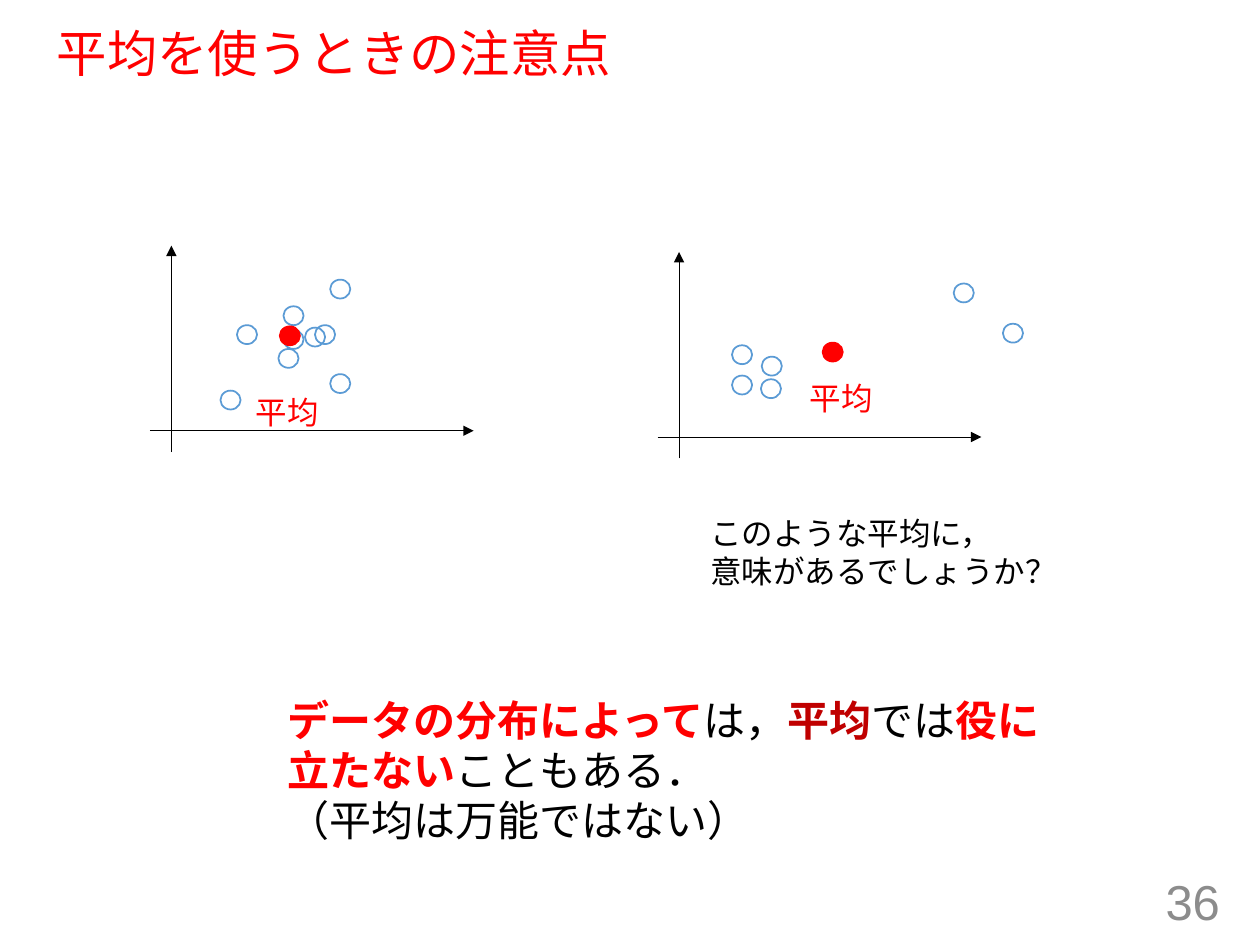
from dataclasses import dataclass

from lxml import etree
from pptx import Presentation
from pptx.dml.color import RGBColor
from pptx.enum.shapes import MSO_CONNECTOR, MSO_SHAPE
from pptx.enum.text import MSO_ANCHOR, MSO_AUTO_SIZE, PP_ALIGN
from pptx.oxml.ns import qn
from pptx.util import Pt

STRAIGHT = MSO_CONNECTOR.STRAIGHT
OVAL = MSO_SHAPE.OVAL
MIDDLE, TOP = MSO_ANCHOR.MIDDLE, MSO_ANCHOR.TOP
LEFT, RIGHT = PP_ALIGN.LEFT, PP_ALIGN.RIGHT
NO_AUTOFIT, GROW = MSO_AUTO_SIZE.NONE, MSO_AUTO_SIZE.SHAPE_TO_FIT_TEXT


@dataclass(frozen=True)
class Theme:
    """Colours, fonts and type sizes of the deck."""
    red: RGBColor = RGBColor(0xFF, 0x00, 0x00)
    dark_red: RGBColor = RGBColor(0xC0, 0x00, 0x00)
    black: RGBColor = RGBColor(0x00, 0x00, 0x00)
    grey: RGBColor = RGBColor(0x8C, 0x8C, 0x8C)
    blue: RGBColor = RGBColor(0x5B, 0x9B, 0xD5)
    heading_font: str = "Arial"
    note_font: str = "Calibri"
    body_font: str = "Noto Sans CJK JP"
    title_size: float = 28.8
    number_size: float = 28
    body_size: float = 24
    label_size: float = 18


THEME = Theme()
AXIS_INSET = 12.25
MARKER_WIDTH, MARKER_HEIGHT = 11.5, 10.8
PLOT_SIZE = (185, 118)
LABEL_SIZE = (51, 29)

CLUSTERED = [(76.3, 34.6), (88.6, 46.8), (94.3, 45.4), (73.4, 59), (76.3, 48.2),
             (49.7, 45.4), (103, 19.4), (103, 73.4), (40.3, 82.8)]
SCATTERED = [(59, 72.7), (169.2, 18), (59.5, 59.8), (42.5, 53.3),
             (197.3, 41), (42.5, 70.6)]


def style_font(font, name, size, color):
    """Set the name, size and colour of a font."""
    font.name = name
    font.size = Pt(size)
    font.color.rgb = color


def add_text(page, area, lines, name, size, color, align=LEFT, anchor=TOP,
             wrap=True, fit=GROW):
    """Place lines of (text, emphasis colour) spans in an area and return the box."""
    box = page.shapes.add_textbox(*map(Pt, area))
    frame = box.text_frame
    frame.word_wrap = wrap
    frame.auto_size = fit
    frame.vertical_anchor = anchor
    for index, line in enumerate(lines):
        para = frame.paragraphs[0] if index == 0 else frame.add_paragraph()
        para.alignment = align
        style_font(para.font, name, size, color)
        for text, emphasis in line:
            span = para.add_run()
            span.text = text
            if emphasis is not None:
                span.font.bold = True
                span.font.color.rgb = emphasis
    return box


def add_axis(page, start, end):
    """Draw a thin axis with an arrowhead at its end."""
    axis = page.shapes.add_connector(STRAIGHT, *map(Pt, start + end))
    axis.line.color.rgb = THEME.black
    axis.line.width = Pt(0.5)
    etree.SubElement(axis.line._get_or_add_ln(), qn("a:tailEnd"), type="triangle")
    etree.SubElement(axis._element.spPr, qn("a:effectLst"))


def add_marker(page, left, top, color, filled=False):
    """Draw one data marker, hollow or filled."""
    marker = page.shapes.add_shape(
        OVAL, Pt(left), Pt(top), Pt(MARKER_WIDTH), Pt(MARKER_HEIGHT))
    marker.shadow.inherit = False
    marker.line.color.rgb = color
    marker.line.width = Pt(1)
    if filled:
        marker.fill.solid()
        marker.fill.fore_color.rgb = color
    else:
        marker.fill.background()


def add_plot(page, area, points, mean, label):
    """Draw axes, data points and the labelled mean relative to an area."""
    left, top, width, height = area
    axis_x, axis_y = left + AXIS_INSET, top + height - AXIS_INSET
    add_axis(page, (left, axis_y), (left + width, axis_y))
    add_axis(page, (axis_x, top + height), (axis_x, top))
    for x, y in points:
        add_marker(page, left + x, top + y, THEME.blue)
    add_marker(page, left + mean[0], top + mean[1], THEME.red, filled=True)
    add_text(page, (left + label[0], top + label[1], *LABEL_SIZE), [[("平均", None)]],
             THEME.body_font, THEME.label_size, THEME.red, wrap=False)


def add_title(page, area, text):
    """Move and format the title placeholder."""
    title = page.shapes.title
    title.left, title.top, title.width, title.height = map(Pt, area)
    frame = title.text_frame
    frame.auto_size = NO_AUTOFIT
    frame.vertical_anchor = MIDDLE
    frame.text = text
    para = frame.paragraphs[0]
    para.alignment = LEFT
    para.line_spacing = 0.9
    style_font(para.font, THEME.heading_font, THEME.title_size, THEME.red)


def add_question(page, area):
    """Ask about the meaning of the scattered mean."""
    add_text(page, area, [[("このような平均に，", None)], [("意味があるでしょうか？", None)]],
             THEME.note_font, THEME.label_size, THEME.black, wrap=False)


def add_conclusion(page, area):
    """State the caution with its key words emphasised."""
    lines = [
        [("データの分布によって", THEME.red), ("は，", None), ("平均", THEME.dark_red),
         ("では", None), ("役に立たない", THEME.red), ("こともある．", None)],
        [("（平均は万能ではない）", None)],
    ]
    add_text(page, area, lines, THEME.body_font, THEME.body_size, THEME.black)


def add_page_number(page, area, number):
    """Place the page number in the lower right corner."""
    add_text(page, area, [[(str(number), None)]], THEME.heading_font,
             THEME.number_size, THEME.grey, align=RIGHT, anchor=MIDDLE, fit=NO_AUTOFIT)


def main():
    """Build and save the slide."""
    deck = Presentation()
    deck.slide_width, deck.slide_height = Pt(720), Pt(540)
    page = deck.slides.add_slide(deck.slide_layouts.get_by_name("Title Only"))
    add_title(page, (25.2, 13.7, 666, 36.7), "平均を使うときの注意点")
    add_page_number(page, (542.2, 500.4, 162, 28.8), 36)
    add_plot(page, (85.7, 140.4, *PLOT_SIZE), CLUSTERED, (74.2, 46.1), (53.3, 80.6))
    add_conclusion(page, (157, 393.1, 450.7, 94.3))
    add_plot(page, (375.8, 144, *PLOT_SIZE), SCATTERED, (94.3, 51.8), (79.9, 69.1))
    add_question(page, (398.9, 290.2, 214.6, 51.1))
    deck.save("out.pptx")


if __name__ == "__main__":
    main()
